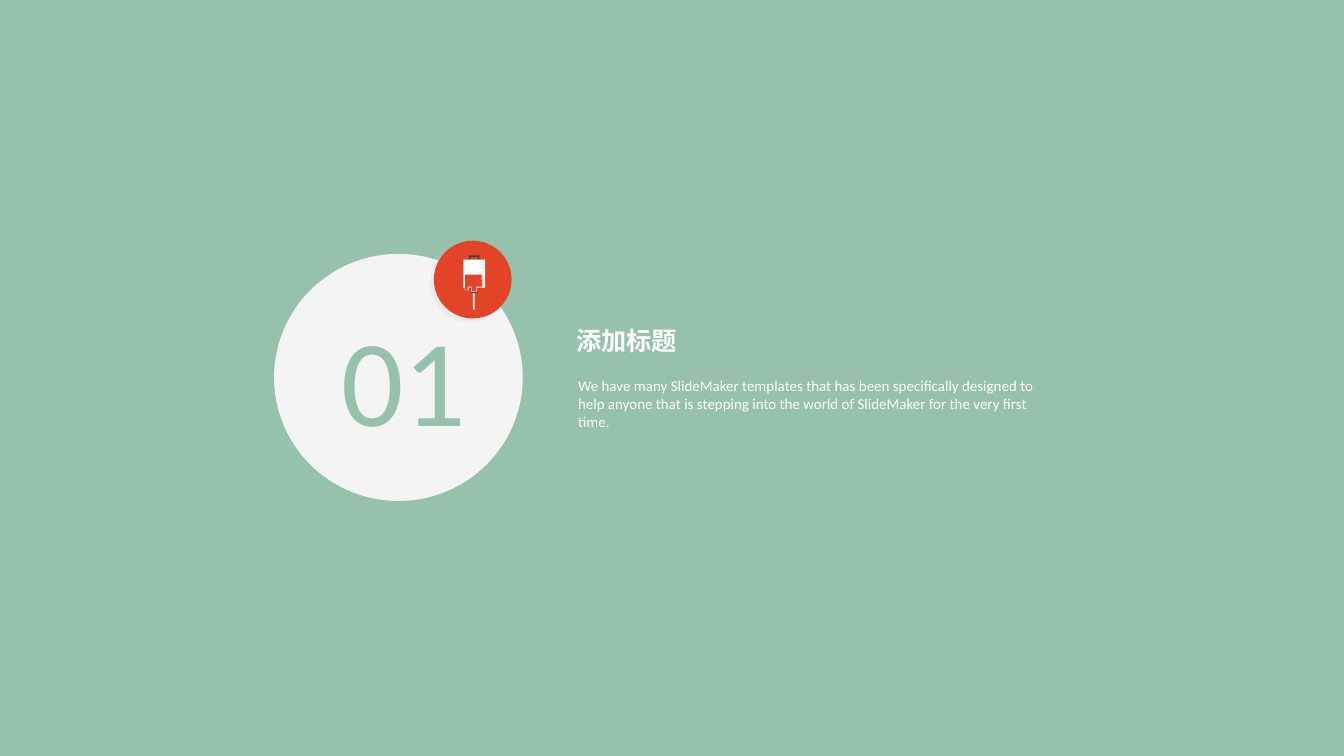
from dataclasses import dataclass

from lxml.etree import SubElement
from pptx import Presentation
from pptx.dml.color import RGBColor
from pptx.enum.shapes import MSO_SHAPE
from pptx.enum.text import MSO_ANCHOR, MSO_AUTO_SIZE, PP_ALIGN
from pptx.oxml.ns import qn
from pptx.util import Cm, Pt


@dataclass(frozen=True)
class Theme:
    font: str = "Calibri"
    background: str = "95C1AD"
    white: str = "FFFFFF"
    disc: str = "F4F4F4"
    accent: str = "E34326"
    dark: str = "414042"
    tick: str = "CED0D1"
    shadow: str = "E7E6E6"
    title_size: float = 13.5
    body_size: float = 8
    number_size: float = 66


@dataclass(frozen=True)
class Box:
    left: float
    top: float
    width: float
    height: float

    def inside(self, left, top, width, height):
        return Box(self.left + left, self.top + top, width, height)

    def lengths(self):
        return Cm(self.left), Cm(self.top), Cm(self.width), Cm(self.height)

    def corners(self):
        right, bottom = self.left + self.width, self.top + self.height
        points = (self.left, self.top), (right, self.top), (right, bottom), (self.left, bottom)
        return [(Cm(x), Cm(y)) for x, y in points]


THEME = Theme()


def paint(part, color):
    part.shadow.inherit = False
    part.fill.solid()
    part.fill.fore_color.rgb = RGBColor.from_string(color)
    part.line.fill.background()


def add_filled(group, preset, box, color):
    part = group.shapes.add_shape(preset, *box.lengths())
    paint(part, color)
    return part


def write(holder, words, size, color, align=PP_ALIGN.LEFT, bold=False):
    frame = holder.text_frame
    frame.text = words
    frame.word_wrap = True
    frame.auto_size = MSO_AUTO_SIZE.NONE
    frame.vertical_anchor = MSO_ANCHOR.TOP
    paragraph = frame.paragraphs[0]
    paragraph.alignment = align
    paragraph.space_before = Pt(0)
    paragraph.font.name = THEME.font
    paragraph.font.size = Pt(size)
    paragraph.font.bold = bold
    paragraph.font.color.rgb = RGBColor.from_string(color)
    return frame


def move(holder, box):
    holder.left, holder.top, holder.width, holder.height = box.lengths()


def place_heading(slide, box):
    heading = slide.shapes.title
    move(heading, box.inside(0.23, 0, 8.3, 0.58))
    frame = write(heading, "添加标题", THEME.title_size, THEME.white, bold=True)
    frame.margin_left = frame.margin_right = frame.margin_top = frame.margin_bottom = 0

    summary = slide.placeholders[1]
    move(summary, box.inside(0, 0.84, box.width, 1.27))
    frame = write(
        summary,
        "We have many SlideMaker templates that has been specifically designed to "
        "help anyone that is stepping into the world of SlideMaker for the very first time.",
        THEME.body_size,
        THEME.white,
    )
    properties = frame.paragraphs[0]._p.get_or_add_pPr()
    properties.set("marL", "0")
    properties.set("indent", "0")
    SubElement(properties, qn("a:buNone"))


def place_number(slide, box):
    group = slide.shapes.add_group_shape()
    add_filled(group, MSO_SHAPE.OVAL, box, THEME.disc)
    number = group.shapes.add_textbox(*box.inside(0.71, 0.81, 3.48, 3.05).lengths())
    write(number, "01", THEME.number_size, THEME.background, PP_ALIGN.CENTER)


def add_badge_shadow(badge):
    effects = badge._element.spPr.find(qn("a:effectLst"))
    shadow = SubElement(
        effects, qn("a:outerShdw"), blurRad="0", dist=str(Pt(2.8)),
        dir=str(135 * 60000), algn="tr", rotWithShape="0",
    )
    tint = SubElement(shadow, qn("a:srgbClr"), val=THEME.shadow)
    SubElement(tint, qn("a:alpha"), val="50000")


def add_hanger(group, box, border):
    hole = box.inside(border, border, box.width - 2 * border, box.height - 2 * border)
    outer, inner = box.corners(), hole.corners()[::-1]
    outline = group.shapes.build_freeform(*outer[0], scale=1.0)
    outline.add_line_segments(outer[1:])
    outline.move_to(*inner[0])
    outline.add_line_segments(inner[1:])
    paint(outline.convert_to_shape(), THEME.dark)


def place_drip_badge(slide, box):
    group = slide.shapes.add_group_shape()
    add_badge_shadow(add_filled(group, MSO_SHAPE.OVAL, box, THEME.accent))
    add_hanger(group, box.inside(0.66, 0.28, 0.2, 0.15), 0.03)

    bag_parts = [
        ((0.56, 0.36, 0.41, 0.53), THEME.white),
        ((0.59, 0.64, 0.33, 0.23), THEME.accent),
        ((0.58, 0.89, 0.08, 0.05), THEME.white),
        ((0.71, 0.89, 0.1, 0.08), THEME.white),
        ((0.72, 0.86, 0.08, 0.1), THEME.accent),
        ((0.59, 0.86, 0.05, 0.08), THEME.accent),
        ((0.74, 0.97, 0.03, 0.33), THEME.white),
    ]
    ticks = [((0.89, 0.41 + 0.04 * step, 0.05, 0.01), THEME.tick) for step in range(11)]
    clamp = ((0.71, 0.97, 0.13, 0.02), THEME.dark)
    for bounds, color in [*bag_parts, *ticks, clamp]:
        add_filled(group, MSO_SHAPE.RECTANGLE, box.inside(*bounds), color)


def main():
    deck = Presentation()
    deck.slide_width, deck.slide_height = Cm(25.4), Cm(14.29)
    slide = deck.slides.add_slide(deck.slide_layouts[1])
    slide.background.fill.solid()
    slide.background.fill.fore_color.rgb = RGBColor.from_string(THEME.background)
    place_heading(slide, Box(10.67, 6.15, 9.2, 2.11))
    place_number(slide, Box(5.18, 4.8, 4.7, 4.67))
    place_drip_badge(slide, Box(8.2, 4.55, 1.47, 1.47))
    deck.save("out.pptx")


if __name__ == "__main__":
    main()
